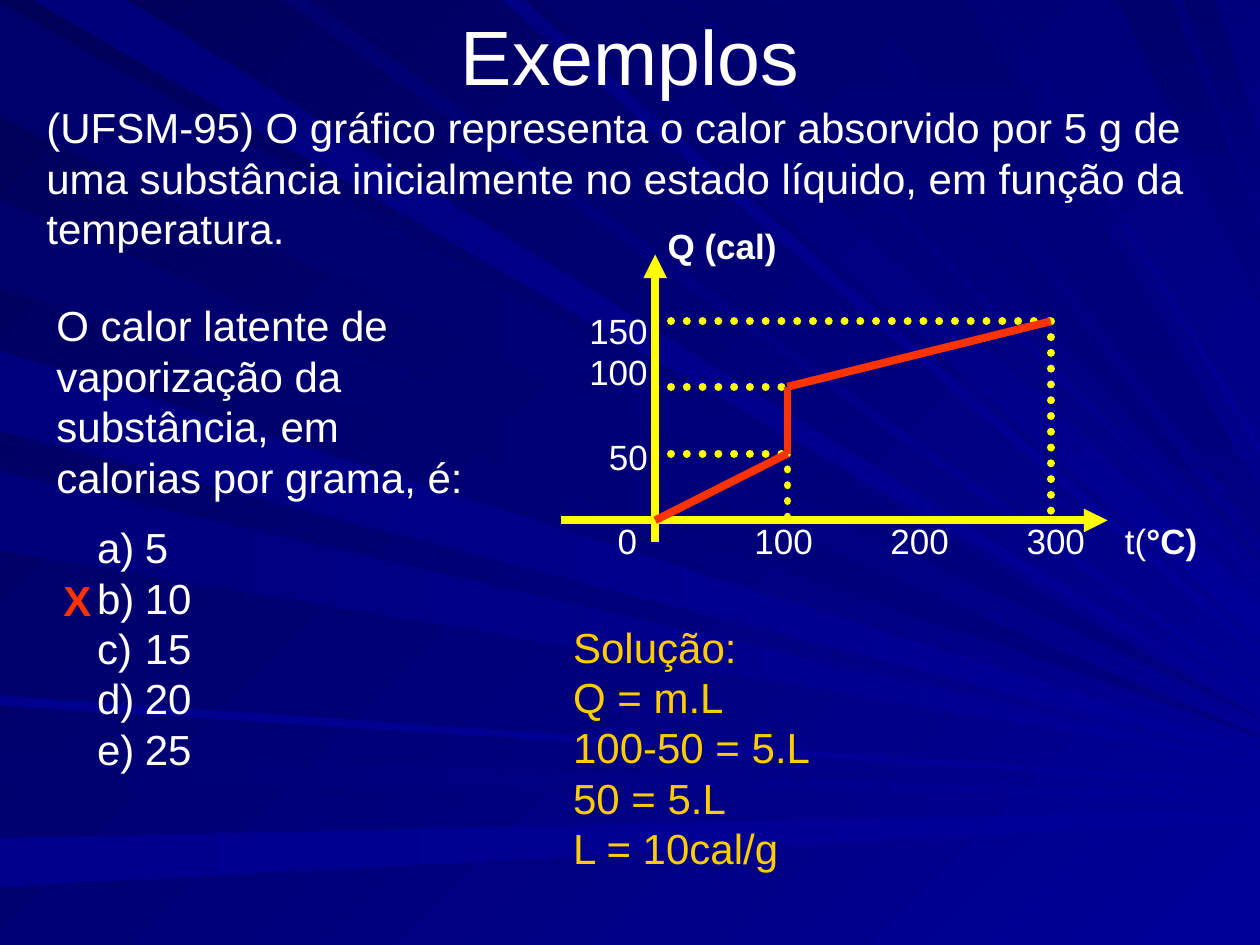
from lxml.etree import SubElement
from pptx import Presentation
from pptx.dml.color import RGBColor
from pptx.enum.dml import MSO_LINE
from pptx.enum.shapes import MSO_CONNECTOR
from pptx.enum.text import MSO_ANCHOR, MSO_AUTO_SIZE, PP_ALIGN
from pptx.oxml.ns import qn
from pptx.util import Inches, Pt

WHITE, GOLD, YELLOW, RED = "FFFFFF", "FFCC00", "FFFF00", "FF3300"
DARK, NAVY, BLUE = "00006D", "000080", "000099"
LEFT, MID, RIGHT = PP_ALIGN.LEFT, PP_ALIGN.CENTER, PP_ALIGN.RIGHT
TOP, CENTER = MSO_ANCHOR.TOP, MSO_ANCHOR.MIDDLE

SIDE = [
    (0.02, 0.93, 5.7, 5.7, DARK, NAVY),
    (5.96, 6.23, 6.31, 6.32, "000071", BLUE),
    (6.65, 7.04, 6.43, 6.51, "00008C", BLUE),
    (1.59, 2.28, 5.84, 5.85, DARK, NAVY),
    (2.78, 3.42, 5.96, 6.02, "00007E", BLUE),
    (3.74, 4.37, 6.05, 6.06, "00007B", BLUE),
    (5.52, 5.6, 6.21, 6.23, "00008E", BLUE),
]
ROOF = [
    (0.26, 1.01, 5.62, 5.63, "00007B", BLUE),
    (2.25, 2.47, 5.47, 5.52, "000070", BLUE),
    (3.98, 4.16, 5.15, 5.21, "000083", BLUE),
    (4.26, 4.92, 4.79, 5.07, DARK, BLUE),
    (5.4, 5.52, 4.6, 4.63, "000073", BLUE),
    (6.06, 6.61, 4.45, 4.46, "000073", NAVY),
    (6.86, 7.7, 3.9, 4.28, "000073", NAVY),
    (7.85, 7.92, 3.54, 3.6, "000078", BLUE),
    (8.87, 9.3, 1.83, 2.37, DARK, NAVY),
    (9.39, 9.64, 1.14, 1.67, DARK, NAVY),
]


def tint(color, code):
    color.rgb = RGBColor.from_string(code)


def apply(item, values):
    for name, value in values.items():
        setattr(item, name, value)


def place(shape, box):
    apply(shape, dict(zip(("left", "top", "width", "height"), map(Inches, box))))


def blend(fill, first, last, angle):
    fill.gradient()
    fill.gradient_angle = -angle % 360
    for stop, code in zip(fill.gradient_stops, (first, last)):
        tint(stop.color, code)


def add_ray(group, points, first, last, angle):
    spots = [(Inches(x), Inches(y)) for x, y in points]
    pen = group.shapes.build_freeform(*spots[0])
    pen.add_line_segments(spots[1:], close=True)
    ray = pen.convert_to_shape()
    ray.shadow.inherit = False
    ray.line.fill.background()
    blend(ray.fill, first, last, angle)


def add_rays(slide):
    group = slide.shapes.add_group_shape()
    for near, far, high, low, first, last in SIDE:
        add_ray(group, [(0, near), (0, far), (10, low), (10, high)], first, last, 0)
    for near, far, high, low, first, last in ROOF:
        angle = 90 if last == NAVY else 45
        add_ray(group, [(near, 0), (far, 0), (10, high), (10, low)], first, last, angle)


def write(shape, lines, size=24, code=WHITE, bold=False, align=LEFT, anchor=TOP):
    frame = shape.text_frame
    apply(frame, {"word_wrap": True, "auto_size": MSO_AUTO_SIZE.NONE,
                  "vertical_anchor": anchor})
    for i, line in enumerate(lines):
        para = frame.add_paragraph() if i else frame.paragraphs[0]
        apply(para, {"alignment": align, "space_before": Pt(0)})
        runs = [(line, bold)] if isinstance(line, str) else line
        for words, heavy in runs:
            run = para.add_run()
            run.text = words
            apply(run.font, {"name": "Arial", "size": Pt(size), "bold": heavy})
            tint(run.font.color, code)


def add_text(slide, box, lines, **style):
    shape = slide.shapes.add_textbox(*map(Inches, box))
    write(shape, lines, **style)


def add_list(shape, box, lines):
    place(shape, box)
    write(shape, lines, anchor=CENTER)
    for para in shape.text_frame.paragraphs:
        props = para._p.get_or_add_pPr()
        props.set("marL", str(Inches(0.38)))
        props.set("indent", str(Inches(-0.38)))
        SubElement(props, qn("a:buAutoNum"), type="alphaLcParenR")


def add_line(slide, start, end, code=YELLOW, dots=False, arrow=False):
    line = slide.shapes.add_connector(
        MSO_CONNECTOR.STRAIGHT, *map(Inches, (*start, *end)))
    line.line.width = Pt(4.5)
    tint(line.line.color, code)
    props = line.element.spPr
    edge = props.get_or_add_ln()
    if dots:
        line.line.dash_style = MSO_LINE.ROUND_DOT
        edge.set("cap", "rnd")
    if arrow:
        SubElement(edge, qn("a:tailEnd"), type="triangle")
    SubElement(props, qn("a:effectLst"))


def add_graph(slide):
    left, bend, right = 5.2, 6.25, 8.34
    base, low, mid, high = 4.13, 3.6, 3.07, 2.55
    add_line(slide, (left, 4.3), (left, 2.02), arrow=True)
    add_line(slide, (4.45, base), (8.79, base), arrow=True)
    for x, y in ((bend, low), (bend, mid), (right, high)):
        add_line(slide, (left, y), (x, y), dots=True)
    for x, y in ((bend, low), (right, high)):
        add_line(slide, (x, y), (x, base), dots=True)
    curve = [(left, base), (bend, low), (bend, mid), (right, high)]
    for start, end in zip(curve, curve[1:]):
        add_line(slide, start, end, RED)

    def label(x, y, words, align):
        shift = {LEFT: 0.1, MID: 0.5, RIGHT: 0.9}[align]
        add_text(slide, (x - shift, y - 0.2, 1, 0.4), [words],
                 size=20, align=align, anchor=CENTER)

    for y, words in ((2.62, "150"), (2.95, "100"), (3.62, "50")):
        label(5.14, y, words, RIGHT)
    label(4.98, 4.29, "0", MID)
    for i in range(3):
        label(6.22 + 1.08 * i, 4.29, str(100 * (i + 1)), MID)
    label(8.93, 4.29, [("t(", False), ("°C)", True)], LEFT)
    add_text(slide, (5.2, 1.75, 1.3, 0.4), ["Q (cal)"],
             size=20, bold=True, anchor=CENTER)


def main():
    deck = Presentation()
    apply(deck, {"slide_width": Inches(10), "slide_height": Inches(7.5)})
    slide = deck.slides.add_slide(deck.slide_layouts[1])
    blend(slide.background.fill, "000058", BLUE, 45)
    title, body = slide.placeholders
    add_rays(slide)
    for shape in (title, body):
        shape.element.getparent().append(shape.element)

    place(title, (0.5, -0.19, 9, 1.25))
    write(title, ["Exemplos"], size=44, align=MID, anchor=CENTER)
    add_list(body, (0.67, 4.09, 1.65, 2.1), ["5", "10", "15", "20", "25"])
    add_text(slide, (0.27, 0.76, 9.69, 1.3), [
        "(UFSM-95) O gráfico representa o calor absorvido por 5 g de uma "
        "substância inicialmente no estado líquido, em função da temperatura."])
    add_text(slide, (0.35, 2.33, 3.47, 1.7), [
        "O calor latente de vaporização da substância, em calorias por grama, é:"],
        anchor=CENTER)
    add_text(slide, (4.45, 4.88, 2.99, 2.1), [
        "Solução:", "Q = m.L", "100-50 = 5.L", "50 = 5.L", "L = 10cal/g"], code=GOLD)
    add_graph(slide)
    add_text(slide, (0.4, 4.51, 0.43, 0.5), ["X"], code=RED, bold=True, align=MID)
    deck.save("out.pptx")


if __name__ == "__main__":
    main()
